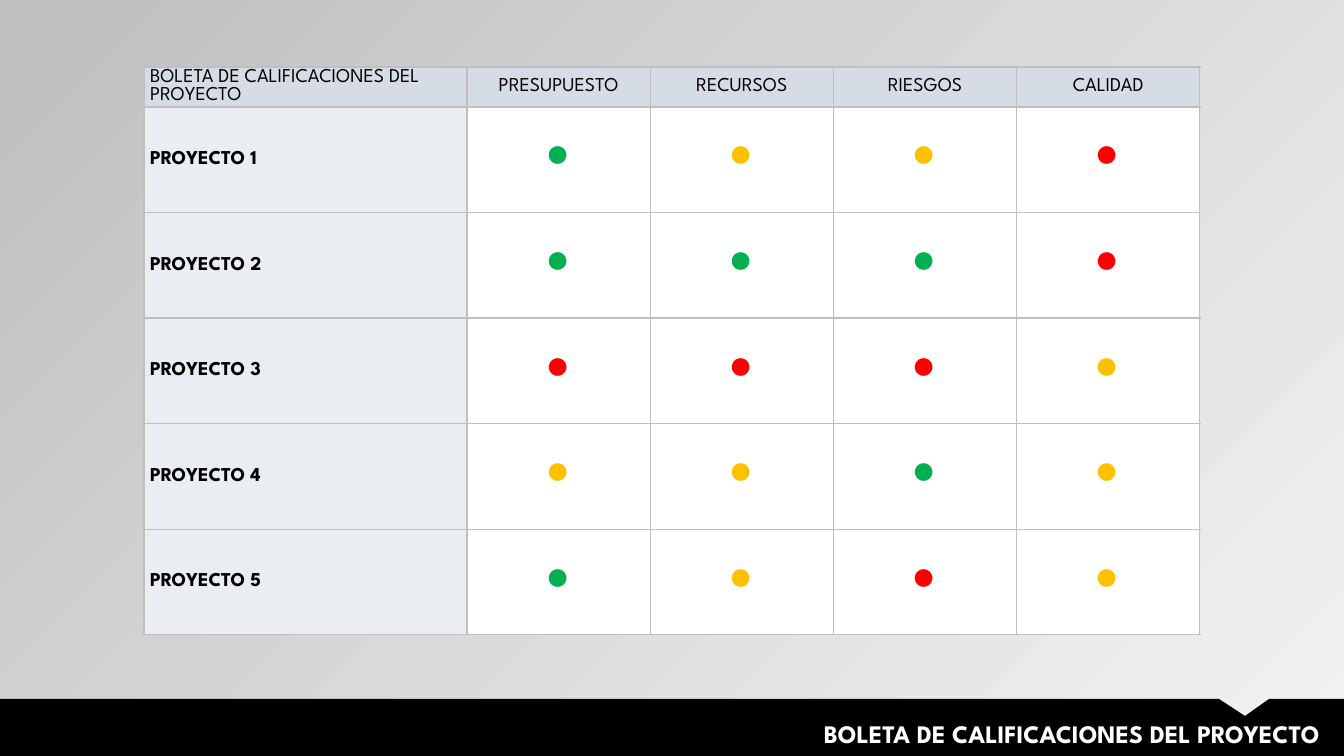
from dataclasses import dataclass

from lxml import etree
from pptx import Presentation
from pptx.dml.color import RGBColor
from pptx.enum.text import MSO_ANCHOR, PP_ALIGN
from pptx.oxml.ns import qn
from pptx.util import Pt

PX = 12192000 / 1344
LEFT, CENTER, RIGHT = PP_ALIGN.LEFT, PP_ALIGN.CENTER, PP_ALIGN.RIGHT
MIDDLE, BOTTOM = MSO_ANCHOR.MIDDLE, MSO_ANCHOR.BOTTOM
TITLE_ONLY = 5


@dataclass(frozen=True)
class Theme:
    font: str = "League Spartan"
    title_size: int = 18
    label_size: int = 14
    dot_size: int = 60
    black: str = "000000"
    white: str = "FFFFFF"
    light: str = "F2F2F2"
    grey: str = "BFBFBF"
    header: str = "D6DCE5"
    project: str = "EAEEF3"
    good: str = "00B050"
    fair: str = "FFC000"
    poor: str = "FF0000"


THEME = Theme()
TITLE = "BOLETA DE CALIFICACIONES DEL PROYECTO"
CRITERIA = ["PRESUPUESTO", "RECURSOS", "RIESGOS", "CALIDAD"]
RATING_COLORS = {"G": THEME.good, "F": THEME.fair, "P": THEME.poor}
# One word per project, one letter per criterion: good, fair, poor
RATINGS = ["GFFP", "GGGP", "PPPF", "FFGF", "GFPF"]


def px(length):
    return round(length * PX)


def rgb(color):
    return RGBColor.from_string(color)


def write(frame, text, size, color, align=LEFT, bold=False):
    para = frame.paragraphs[0]
    para.text = text
    para.alignment = align
    font = para.font
    font.name, font.size, font.bold = THEME.font, Pt(size), bold
    font.color.rgb = rgb(color)


def set_borders(cell):
    properties = cell._tc.get_or_add_tcPr()
    for index, side in enumerate(("lnL", "lnR", "lnT", "lnB")):
        line = etree.Element(qn(f"a:{side}"), w=str(Pt(1)))
        fill = etree.SubElement(line, qn("a:solidFill"))
        etree.SubElement(fill, qn("a:srgbClr"), val=THEME.grey)
        properties.insert(index, line)


def fill_cell(cell, text, fill, size=THEME.label_size, color=THEME.black,
              align=CENTER, bold=False):
    cell.fill.solid()
    cell.fill.fore_color.rgb = rgb(fill)
    set_borders(cell)
    cell.vertical_anchor = MIDDLE
    cell.margin_left = cell.margin_right = px(6)
    cell.margin_top = cell.margin_bottom = 0
    write(cell.text_frame, text, size, color, align, bold)


def paint_background(page):
    fill = page.background.fill
    fill.gradient()
    fill.gradient_angle = 135
    for stop, color in zip(fill.gradient_stops, (THEME.light, THEME.grey)):
        stop.color.rgb = rgb(color)


def add_footer(page, left, top, width, height):
    """Draw the notched band with the slide title on it."""
    right, bottom = left + width, top + height
    outline = page.shapes.build_freeform(left, top, scale=PX)
    outline.add_line_segments([
        (right - 125, top), (right - 99, top + 17), (right - 75, top),
        (right, top), (right, bottom), (left, bottom),
    ])
    band = outline.convert_to_shape()
    band.shadow.inherit = False
    band.fill.solid()
    band.fill.fore_color.rgb = rgb(THEME.black)
    band.line.fill.background()

    title = page.shapes.title
    title.left, title.top = px(right - 927), px(top + 15)
    title.width, title.height = px(913), px(40)
    frame = title.text_frame
    frame.word_wrap = True
    frame.vertical_anchor = BOTTOM
    frame.margin_top = frame.margin_bottom = px(5)
    write(frame, TITLE, THEME.title_size, THEME.white, RIGHT, bold=True)
    page.shapes._spTree.append(title._element)  # in front of the band


def add_report_card(page, left, top, width, height):
    label_width, header_height = 323, 40
    rows, columns = len(RATINGS) + 1, len(CRITERIA) + 1
    table = page.shapes.add_table(
        rows, columns, px(left), px(top), px(width), px(height)).table
    table.first_row = table.horz_banding = False
    for index, column in enumerate(table.columns):
        column.width = px((width - label_width) / len(CRITERIA) if index else label_width)
    for index, row in enumerate(table.rows):
        row.height = px((height - header_height) / len(RATINGS) if index else header_height)

    fill_cell(table.cell(0, 0), TITLE, THEME.header, align=LEFT)
    for column, criterion in enumerate(CRITERIA, 1):
        fill_cell(table.cell(0, column), criterion, THEME.header)
    for row, ratings in enumerate(RATINGS, 1):
        fill_cell(table.cell(row, 0), f"PROYECTO {row}", THEME.project,
                  align=LEFT, bold=True)
        for column, rating in enumerate(ratings, 1):
            fill_cell(table.cell(row, column), "•", THEME.white,
                      THEME.dot_size, RATING_COLORS[rating])


def main():
    deck = Presentation()
    deck.slide_width, deck.slide_height = px(1344), px(756)
    page = deck.slides.add_slide(deck.slide_layouts[TITLE_ONLY])
    paint_background(page)
    add_report_card(page, 144, 67, 1056, 568)
    add_footer(page, 0, 699, 1344, 57)
    deck.save("out.pptx")


if __name__ == "__main__":
    main()
